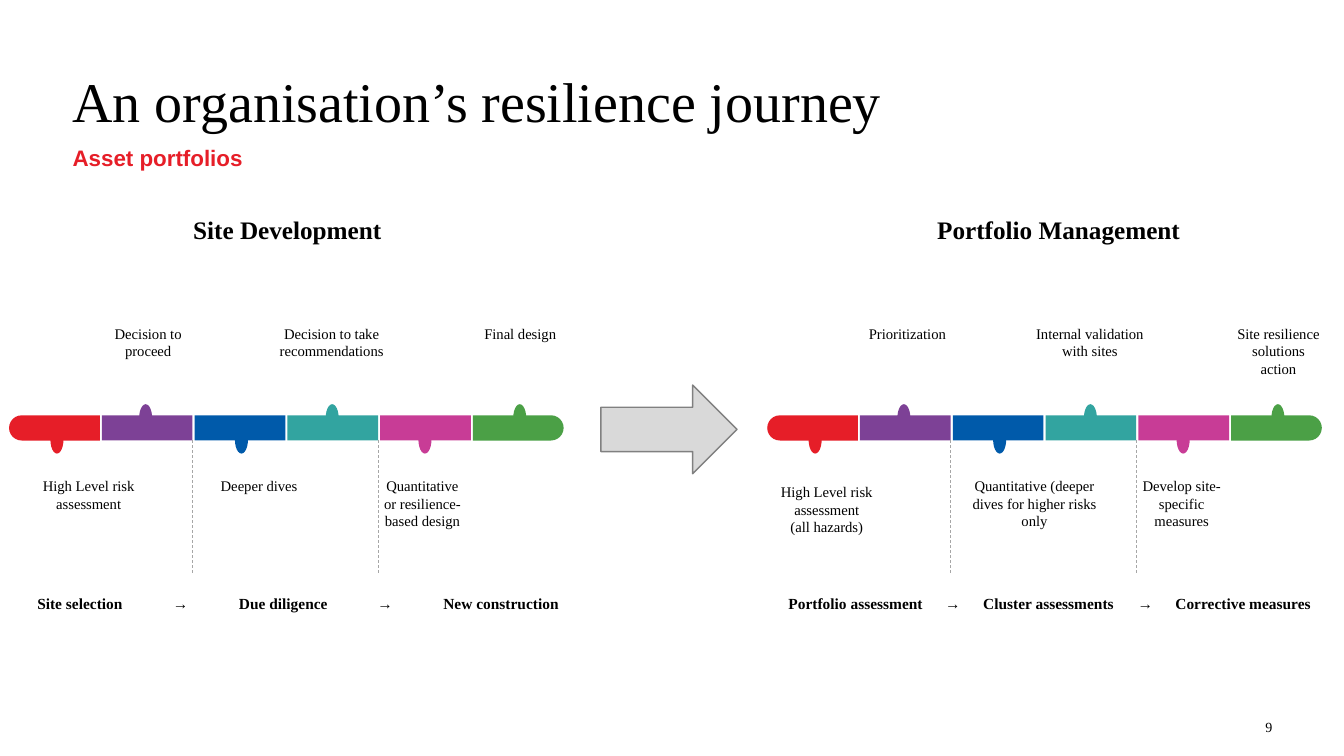
from lxml import etree
from pptx import Presentation
from pptx.dml.color import RGBColor
from pptx.enum.dml import MSO_LINE
from pptx.enum.shapes import MSO_CONNECTOR, MSO_SHAPE
from pptx.enum.text import MSO_ANCHOR, PP_ALIGN
from pptx.oxml.ns import qn
from pptx.util import Inches, Pt

LEFT, MID, RIGHT = PP_ALIGN.LEFT, PP_ALIGN.CENTER, PP_ALIGN.RIGHT
TOP, CENTRE = MSO_ANCHOR.TOP, MSO_ANCHOR.MIDDLE
RECT, OVAL = MSO_SHAPE.RECTANGLE, MSO_SHAPE.OVAL
CAP, ARROW = MSO_SHAPE.ROUND_2_SAME_RECTANGLE, MSO_SHAPE.RIGHT_ARROW
LINE, DASH = MSO_CONNECTOR.STRAIGHT, MSO_LINE.DASH
SERIF, SANS = "Times New Roman", "Arial"

# Content
TITLE = "An organisation’s resilience journey"
SUB = "Asset portfolios"
PAGE = "9"
COLORS = {
    "red": "E61E28", "purple": "7D4196", "blue": "005AAA",
    "teal": "32A4A0", "pink": "C83C96", "green": "4BA046",
    "black": "000000", "dash": "A6A6A6", "light": "D9D9D9", "grey": "808080",
}
# Segment colour and the offset of its marker
PARTS = [("red", 0.41), ("purple", 0.37), ("blue", 0.40),
         ("teal", 0.38), ("pink", 0.38), ("green", 0.40)]
# Captions: text, centre from the bar's left end, width, top
HIGH, LOW = 3.22, 4.73
SIDES = [
    {"x": 0.09, "head": "Site Development", "mid": 2.76,
     "notes": [
         ("High Level risk assessment", 0.79, 1.36, LOW),
         ("Decision to proceed", 1.38, 0.82, HIGH),
         ("Deeper dives", 2.48, 1.19, LOW),
         ("Decision to take recommendations", 3.2, 1.07, HIGH),
         ("Quantitative or resilience-based design", 4.1, 0.82, LOW),
         ("Final design", 5.07, 0.82, HIGH)],
     "steps": ["Site selection", "→", "Due diligence", "→", "New construction"],
     "start": 0.28, "tabs": [1.42, 2.44, 3.45, 4.6]},
    {"x": 7.61, "head": "Portfolio Management", "mid": 2.89,
     "notes": [
         ("High Level risk assessment\n(all hazards)", 0.59, 0.99, 4.79),
         ("Prioritization", 1.39, 0.82, HIGH),
         ("Quantitative (deeper dives for higher risks only", 2.65, 1.49, LOW),
         ("Internal validation with sites", 3.2, 1.07, HIGH),
         ("Develop site-specific measures", 4.11, 0.82, LOW),
         ("Site resilience solutions action", 5.07, 0.82, HIGH)],
     "steps": ["Portfolio assessment", "→", "Cluster assessments", "→",
               "Corrective measures"],
     "start": 0.21, "tabs": [1.63, 2.58, 3.54, 4.51]},
]

# Grid
PITCH, SEG, BAR = 0.92, 0.9, 0.25
ROW, END = 4.12, 5.7
DOT_W, DOT_H = 0.13, 0.28

deck = Presentation()
deck.slide_width, deck.slide_height = Inches(13.33), Inches(7.5)
slide = deck.slides.add_slide(deck.slide_layouts[5])


def color(name):
    return RGBColor.from_string(COLORS[name])


def text(words, x, y, w, h, size=10.5, font=SERIF, ink="black", bold=False,
         align=MID, anchor=TOP, tabs=(), lead=None, box=None):
    box = box or slide.shapes.add_textbox(0, 0, 0, 0)
    box.left, box.top, box.width, box.height = map(Inches, (x, y, w, h))
    frame = box.text_frame
    frame.margin_left = frame.margin_right = 0
    frame.margin_top = frame.margin_bottom = 0
    frame.word_wrap, frame.vertical_anchor = True, anchor
    frame.text = words
    for para in frame.paragraphs:
        para.alignment = align
        if lead:
            para.line_spacing = Pt(lead)
        if tabs:
            stops = etree.SubElement(para._p.get_or_add_pPr(), qn("a:tabLst"))
            for stop in tabs:
                etree.SubElement(stops, qn("a:tab"), pos=str(Inches(stop)),
                                 algn="ctr")
        for run in para.runs:
            run.font.name, run.font.size = font, Pt(size)
            run.font.bold, run.font.color.rgb = bold, color(ink)


def shape(kind, x, y, w, h, fill, home):
    item = home.add_shape(kind, *map(Inches, (x, y, w, h)))
    item.shadow.inherit = False
    item.fill.solid()
    item.fill.fore_color.rgb = color(fill)
    item.line.fill.background()
    return item


def bar(x0):
    home = slide.shapes.add_group_shape().shapes
    last = len(PARTS) - 1
    for i, (fill, shift) in enumerate(PARTS):
        x = x0 + i * PITCH
        if i in (0, last):
            # Rounded ends are upright shapes turned on their side
            end = shape(CAP, x + (SEG - BAR) / 2, ROW - (SEG - BAR) / 2,
                        BAR, SEG, fill, home)
            end.adjustments[0], end.adjustments[1] = 0.5, 0
            end.rotation = 90 if i else 270
        else:
            shape(RECT, x, ROW, SEG, BAR, fill, home)
        y = ROW - 0.11 if i % 2 else ROW + 0.1
        shape(OVAL, x + shift, y, DOT_W, DOT_H, fill, home)


def divide(x):
    rule = slide.shapes.add_connector(
        LINE, *map(Inches, (x, ROW + BAR, x, END)))
    rule.line.color.rgb = color("dash")
    rule.line.width, rule.line.dash_style = Pt(0.5), DASH
    etree.SubElement(rule._element.spPr, qn("a:effectLst"))


# Title, subtitle and page number
text(TITLE, 0.72, 0.72, 9.87, 0.58, size=40, align=LEFT, lead=44,
     box=slide.shapes.title)
text(SUB, 0.72, 1.43, 10.68, 0.27, size=16, font=SANS, ink="red", bold=True,
     align=LEFT)
text(PAGE, 12.11, 7.11, 0.51, 0.2, size=10, align=RIGHT, anchor=CENTRE)

# Two journeys
for side in SIDES:
    x0 = side["x"]
    text(side["head"], x0 + side["mid"] - 1.3, 2.13, 2.6, 0.3, size=18,
         bold=True)
    bar(x0)
    for words, mid, w, y in side["notes"]:
        text(words, x0 + mid - w / 2, y, w, 0.35)
    for col in (2, 4):
        divide(x0 + col * PITCH - 0.02)
    text("\t".join(side["steps"]), x0 + side["start"], 5.89, 5.4, 0.19,
         size=11, bold=True, align=LEFT, tabs=side["tabs"])

# Arrow between the journeys
arrow = shape(ARROW, 5.96, 3.82, 1.35, 0.88, "light", slide.shapes)
arrow.line.color.rgb = color("grey")
arrow.line.width = Pt(1)

deck.save("out.pptx")
